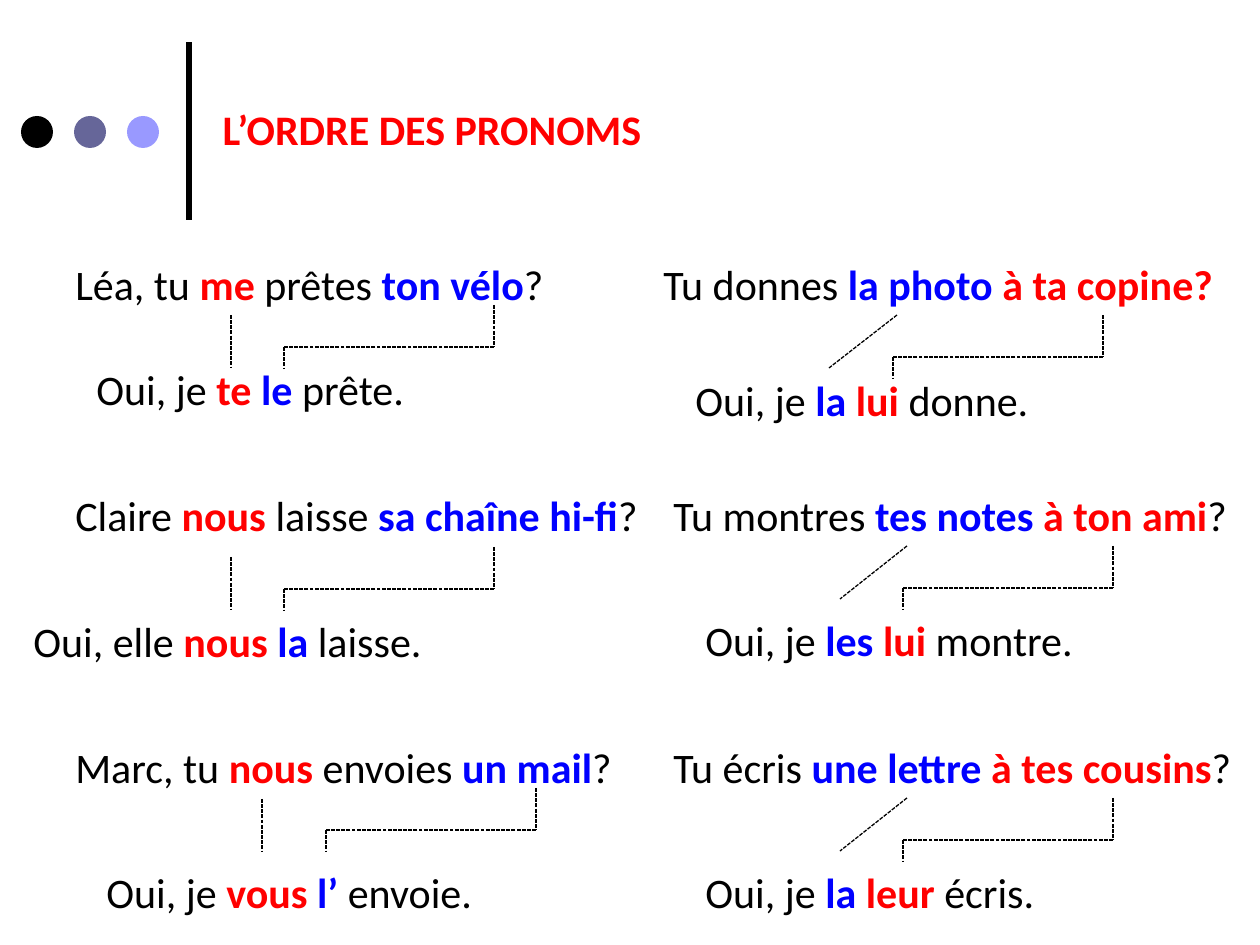
from lxml.etree import SubElement
from pptx import Presentation
from pptx.dml.color import RGBColor
from pptx.enum.dml import MSO_LINE
from pptx.enum.shapes import MSO_CONNECTOR, MSO_SHAPE
from pptx.enum.text import MSO_ANCHOR, MSO_AUTO_SIZE, PP_ALIGN
from pptx.oxml.ns import qn
from pptx.util import Emu, Pt

EMU_PER_PX = 914400 / 126
TITLE_ONLY = 5
BLACK, RED, BLUE = "000000", "FF0000", "0000FF"
DOT_COLOURS = (BLACK, "666699", "9999FF")

# Elbow bracket: it drops, runs to the left, then drops again.
ELBOW_DROP, ELBOW_WIDTH, ELBOW_TIP = 42, 210, 21

# Each exchange: question box, question, answer box, answer,
# straight link (x1, y1, x2, y2), start of the elbow (x, y).
EXCHANGES = [
    ((63, 252, 746), [("Léa, tu ", BLACK), ("me ", RED), ("prêtes ", BLACK),
                      ("ton vélo", BLUE), ("?", BLACK)],
     (84, 357, 462), [("Oui, je ", BLACK), ("te ", RED), ("le ", BLUE), ("prête.", BLACK)],
     (231, 315, 231, 368), (494, 305)),
    ((651, 252, 746), [("Tu donnes ", BLACK), ("la photo ", BLUE), ("à ta copine?", RED)],
     (683, 368, 462), [("Oui, je ", BLACK), ("la ", BLUE), ("lui ", RED), ("donne.", BLACK)],
     (897, 315, 829, 368), (1103, 315)),
    ((63, 483, 620), [("Claire ", BLACK), ("nous ", RED), ("laisse ", BLACK),
                      ("sa chaîne hi-fi", BLUE), ("?", BLACK)],
     (21, 609, 462), [("Oui, elle ", BLACK), ("nous ", RED), ("la ", BLUE), ("laisse.", BLACK)],
     (231, 557, 231, 610), (494, 547)),
    ((661, 483, 620), [("Tu montres ", BLACK), ("tes notes ", BLUE),
                       ("à ton ami", RED), ("?", BLACK)],
     (693, 608, 462), [("Oui, je ", BLACK), ("les ", BLUE), ("lui ", RED), ("montre.", BLACK)],
     (907, 546, 840, 599), (1113, 546)),
    ((63, 735, 620), [("Marc, tu ", BLACK), ("nous ", RED), ("envoies ", BLACK),
                      ("un mail", BLUE), ("?", BLACK)],
     (94, 860, 462), [("Oui, je ", BLACK), ("vous ", RED), ("l’ ", BLUE), ("envoie.", BLACK)],
     (262, 799, 262, 851), (536, 788)),
    ((661, 735, 620), [("Tu écris ", BLACK), ("une lettre ", BLUE),
                       ("à tes cousins", RED), ("?", BLACK)],
     (693, 860, 462), [("Oui, je ", BLACK), ("la ", BLUE), ("leur ", RED), ("écris.", BLACK)],
     (907, 798, 840, 851), (1113, 798)),
]


def px(length):
    return Emu(round(length * EMU_PER_PX))


def colour(hex_string):
    return RGBColor.from_string(hex_string)


class SlideBuilder:
    """Holds the text style and the slide being built."""

    font_name = "Calibri"
    font_size = Pt(24)
    text_height = 63

    def __init__(self, slide):
        self.slide = slide

    def style(self, paragraph):
        paragraph.font.name = self.font_name
        paragraph.font.size = self.font_size

    def title(self, text, left, top, width, height):
        title = self.slide.shapes.title
        title.left, title.top, title.width, title.height = map(px, (left, top, width, height))
        frame = title.text_frame
        frame.text = text
        frame.vertical_anchor = MSO_ANCHOR.MIDDLE
        paragraph = frame.paragraphs[0]
        paragraph.alignment = PP_ALIGN.LEFT
        self.style(paragraph)
        paragraph.font.bold = True
        paragraph.font.color.rgb = colour(RED)

    def dot(self, left, top, size, fill):
        shape = self.slide.shapes.add_shape(
            MSO_SHAPE.OVAL, px(left), px(top), px(size), px(size))
        shape.shadow.inherit = False
        shape.fill.solid()
        shape.fill.fore_color.rgb = colour(fill)
        shape.line.fill.background()

    def line(self, shapes, x1, y1, x2, y2, width=0.75, dash=None):
        connector = shapes.add_connector(
            MSO_CONNECTOR.STRAIGHT, px(x1), px(y1), px(x2), px(y2))
        connector.line.color.rgb = colour(BLACK)
        connector.line.width = Pt(width)
        connector.line.dash_style = dash
        SubElement(connector._element.spPr, qn("a:effectLst"))

    def sentence(self, shapes, left, top, width, runs):
        """Adds a line of text; the coloured runs are bold."""
        box = shapes.add_textbox(px(left), px(top), px(width), px(self.text_height))
        frame = box.text_frame
        frame.word_wrap = True
        frame.auto_size = MSO_AUTO_SIZE.SHAPE_TO_FIT_TEXT
        paragraph = frame.paragraphs[0]
        self.style(paragraph)
        for text, run_colour in runs:
            run = paragraph.add_run()
            run.text = text
            run.font.bold = run_colour != BLACK
            run.font.color.rgb = colour(run_colour)

    def elbow(self, shapes, x, y):
        middle, end = y + ELBOW_DROP, x - ELBOW_WIDTH
        corners = [(x, y), (x, middle), (end, middle), (end, middle + ELBOW_TIP)]
        for start, stop in zip(corners, corners[1:]):
            self.line(shapes, *start, *stop, dash=MSO_LINE.SQUARE_DOT)

    def exchange(self, question_box, question, answer_box, answer, link, elbow_start):
        """Adds a question, and its answer grouped with the links to its pronouns."""
        self.sentence(self.slide.shapes, *question_box, question)
        shapes = self.slide.shapes.add_group_shape().shapes
        self.sentence(shapes, *answer_box, answer)
        self.line(shapes, *link, dash=MSO_LINE.SQUARE_DOT)
        self.elbow(shapes, *elbow_start)


def main():
    presentation = Presentation()
    presentation.slide_width, presentation.slide_height = px(1260), px(945)
    slide = presentation.slides.add_slide(presentation.slide_layouts[TITLE_ONLY])
    builder = SlideBuilder(slide)
    builder.line(slide.shapes, 189, 220, 189, 42, width=3)
    for index, fill in enumerate(DOT_COLOURS):
        builder.dot(21 + 53 * index, 116, 32, fill)
    builder.title("L’ORDRE DES PRONOMS", 210, 97, 945, 64)
    for exchange in EXCHANGES:
        builder.exchange(*exchange)
    presentation.save("out.pptx")


if __name__ == "__main__":
    main()
